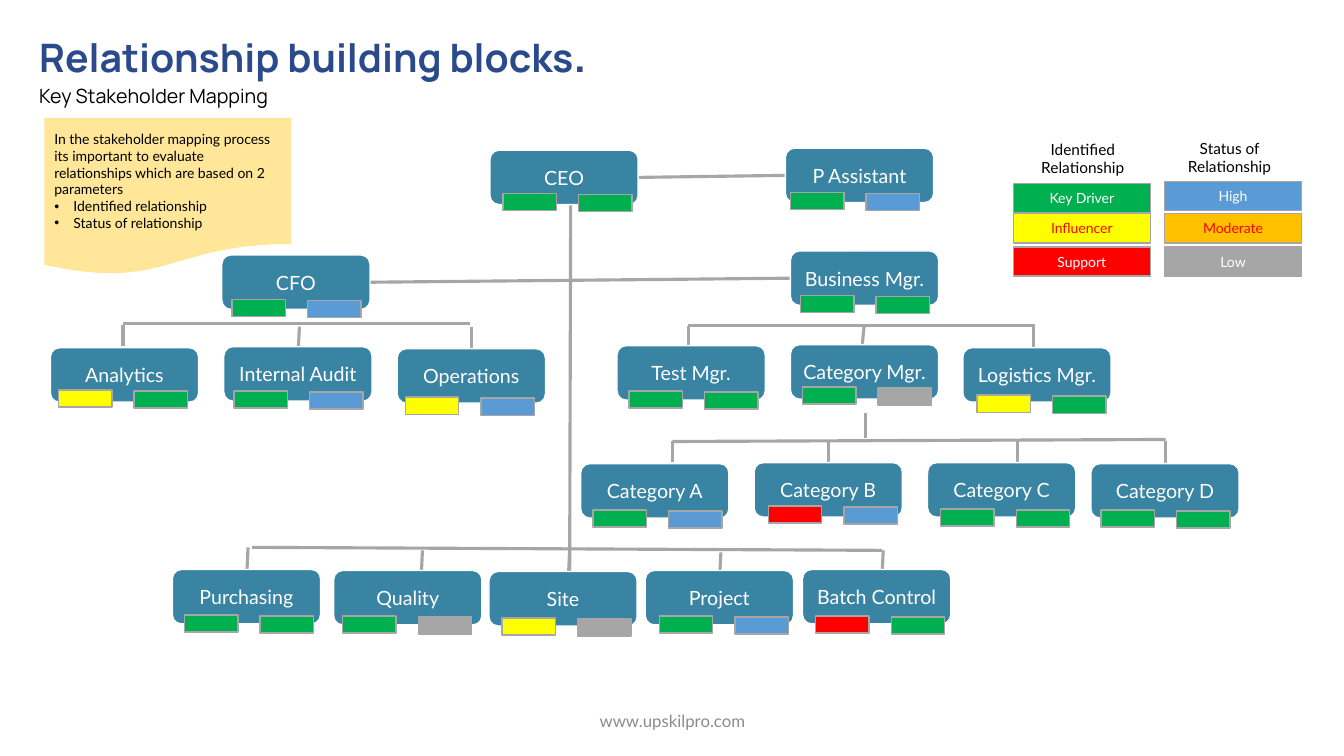
from lxml import etree
from pptx import Presentation
from pptx.dml.color import RGBColor
from pptx.enum.shapes import MSO_CONNECTOR, MSO_SHAPE
from pptx.enum.text import MSO_ANCHOR, PP_ALIGN
from pptx.oxml.ns import qn
from pptx.util import Inches, Pt

GREEN, BLUE, YELLOW, RED, GREY = "00B050", "5B9BD5", "FFFF00", "FF0000", "A6A6A6"
AMBER, TEAL, SAND, NAVY = "FFC000", "3984A3", "FFE699", "2A4A8B"
WHITE, BLACK, FOOTER_GREY = "FFFFFF", "000000", "8C8C8C"

# name, box left and top, first tag left and top, relationship, status
ROLES = [
    ("CEO", 4.86, 1.49, 4.99, 1.92, GREEN, GREEN),
    ("P Assistant", 7.79, 1.47, 7.84, 1.91, GREEN, BLUE),
    ("CFO", 2.2, 2.53, 2.3, 2.97, GREEN, BLUE),
    ("Business Mgr.", 7.84, 2.49, 7.94, 2.93, GREEN, GREEN),
    ("Analytics", 0.5, 3.45, 0.58, 3.87, YELLOW, GREEN),
    ("Internal Audit", 2.22, 3.44, 2.32, 3.88, GREEN, BLUE),
    ("Operations", 3.94, 3.46, 4.02, 3.94, YELLOW, BLUE),
    ("Test Mgr.", 6.12, 3.43, 6.24, 3.88, GREEN, GREEN),
    ("Category Mgr.", 7.84, 3.42, 7.96, 3.84, GREEN, GREY),
    ("Logistics Mgr.", 9.55, 3.45, 9.69, 3.92, YELLOW, GREEN),
    ("Category A", 5.76, 4.6, 5.88, 5.06, GREEN, BLUE),
    ("Category B", 7.48, 4.59, 7.62, 5.02, RED, BLUE),
    ("Category C", 9.2, 4.59, 9.33, 5.05, GREEN, GREEN),
    ("Category D", 10.82, 4.6, 10.92, 5.06, GREEN, GREEN),
    ("Purchasing", 1.71, 5.65, 1.83, 6.1, GREEN, GREEN),
    ("Quality", 3.31, 5.66, 3.4, 6.11, GREEN, GREY),
    ("Site", 4.85, 5.67, 4.98, 6.13, YELLOW, GREY),
    ("Project", 6.4, 5.66, 6.54, 6.11, GREEN, BLUE),
    ("Batch Control", 7.96, 5.65, 8.09, 6.11, RED, GREEN),
]
ROLE_W, ROLE_H = 1.47, 0.54
TAG_W, TAG_H, TAG_DX, TAG_DY = 0.53, 0.17, 0.75, 0.01

# x and y of both ends
REPORTING_LINES = [
    (5.66, 2.03, 5.65, 5.67), (6.34, 1.76, 7.79, 1.74), (3.67, 2.8, 7.84, 2.76),
    # CFO team
    (1.22, 3.21, 4.66, 3.21), (1.22, 3.22, 1.22, 3.43),
    (2.97, 3.24, 2.96, 3.44), (4.68, 3.24, 4.68, 3.46),
    # Business Mgr. team
    (6.82, 3.23, 10.27, 3.23), (6.83, 3.23, 6.83, 3.44),
    (8.57, 3.24, 8.55, 3.44), (10.25, 3.22, 10.25, 3.44),
    # Category Mgr. team
    (8.58, 4.1, 8.58, 4.35), (6.67, 4.38, 11.56, 4.36), (6.67, 4.38, 6.67, 4.58),
    (8.22, 4.39, 8.22, 4.59), (10.09, 4.36, 10.09, 4.59), (11.56, 4.38, 11.56, 4.6),
    # CEO operating team
    (2.5, 5.43, 8.75, 5.46), (2.46, 5.43, 2.45, 5.65), (4.19, 5.46, 4.18, 5.67),
    (5.65, 5.45, 5.64, 5.68), (7.15, 5.48, 7.14, 5.68), (8.76, 5.46, 8.75, 5.67),
]

# heading with its box, key left, then label, top, fill, font colour
LEGEND = [
    ("Identified Relationship", (10.09, 1.34, 1.3, 0.47), 10.05, [
        ("Key Driver", 1.82, GREEN, WHITE),
        ("Influencer", 2.12, YELLOW, RED),
        ("Support", 2.45, RED, WHITE)]),
    ("Status of Relationship", (11.52, 1.33, 1.35, 0.47), 11.55, [
        ("High", 1.8, BLUE, WHITE),
        ("Moderate", 2.12, AMBER, RED),
        ("Low", 2.45, GREY, WHITE)]),
]
KEY_W, KEY_H = 1.36, 0.29

NOTE = ("In the stakeholder mapping process its important to evaluate "
        "relationships which are based on 2 parameters")
NOTE_BULLETS = ["Identified relationship", "Status of relationship"]

prs = Presentation()
prs.slide_width, prs.slide_height = Inches(13.33), Inches(7.5)
s = prs.slides.add_slide(prs.slide_layouts[6])


def rgb(color):
    return RGBColor.from_string(color)


def add_run(p, text, size, color, name="Lato", bold=False):
    r = p.add_run()
    r.text = text
    for key, value in dict(size=Pt(size), name=name, bold=bold).items():
        setattr(r.font, key, value)
    r.font.color.rgb = rgb(color)


def add_block(kind, box, fill, line=None):
    sp = s.shapes.add_shape(kind, *map(Inches, box))
    sp.shadow.inherit = False
    sp.fill.solid()
    sp.fill.fore_color.rgb = rgb(fill)
    if line:
        sp.line.color.rgb = rgb(line)
        sp.line.width = Pt(1)
    else:
        sp.line.fill.background()
    return sp


def add_text_box(box):
    tf = s.shapes.add_textbox(*map(Inches, box)).text_frame
    tf.word_wrap = True
    return tf


def write_centred(tf, text, size, color, anchor=MSO_ANCHOR.MIDDLE):
    tf.vertical_anchor = anchor
    p = tf.paragraphs[0]
    p.alignment = PP_ALIGN.CENTER
    add_run(p, text, size, color)


def add_line(x1, y1, x2, y2):
    line = s.shapes.add_connector(MSO_CONNECTOR.STRAIGHT, *map(Inches, (x1, y1, x2, y2)))
    line.line.color.rgb = rgb(GREY)
    line.line.width = Pt(2.25)
    etree.SubElement(line._element.spPr, qn("a:effectLst"))


def add_bullet(p):
    pPr = p._p.get_or_add_pPr()
    pPr.set("marL", str(Inches(0.19)))
    pPr.set("indent", str(-Inches(0.19)))
    etree.SubElement(pPr, qn("a:buFont")).set("typeface", "Arial")
    etree.SubElement(pPr, qn("a:buChar")).set("char", "•")


# Title and footer
tf = add_text_box((0.29, 0.23, 9.32, 0.88))
p = tf.paragraphs[0]
add_run(p, "Relationship building blocks", 28, NAVY, "Manrope", True)
add_run(p, ".", 32, NAVY, "Manrope", True)
p = tf.add_paragraph()
p.line_spacing, p.space_after = 1.07, Pt(8)
add_run(p, "Key Stakeholder Mapping", 14, BLACK, "Manrope")
write_centred(add_text_box((4.42, 6.95, 4.5, 0.4)), "www.upskilpro.com", 12, FOOTER_GREY)

# Note
note = add_block(MSO_SHAPE.FLOWCHART_DOCUMENT, (0.44, 1.17, 2.45, 1.56), SAND)
tf = note.text_frame
tf.vertical_anchor = MSO_ANCHOR.MIDDLE
add_run(tf.paragraphs[0], NOTE, 10, BLACK)
for text in NOTE_BULLETS:
    p = tf.add_paragraph()
    add_bullet(p)
    add_run(p, text, 10, BLACK)
for p in tf.paragraphs:
    p.alignment = PP_ALIGN.LEFT

# Organisation chart
for ends in REPORTING_LINES:
    add_line(*ends)
for name, x, y, tag_x, tag_y, relationship, status in ROLES:
    role = add_block(MSO_SHAPE.ROUNDED_RECTANGLE, (x, y, ROLE_W, ROLE_H), TEAL, WHITE)
    write_centred(role.text_frame, name, 14, WHITE)
    for i, color in enumerate((relationship, status)):
        add_block(MSO_SHAPE.RECTANGLE,
                  (tag_x + i * TAG_DX, tag_y + i * TAG_DY, TAG_W, TAG_H), color, GREY)

# Legend
for heading, box, x, keys in LEGEND:
    write_centred(add_text_box(box), heading, 11, BLACK, MSO_ANCHOR.TOP)
    for label, y, fill, color in keys:
        key = add_block(MSO_SHAPE.RECTANGLE, (x, y, KEY_W, KEY_H), fill, GREY)
        write_centred(key.text_frame, label, 10, color)

prs.save("out.pptx")
